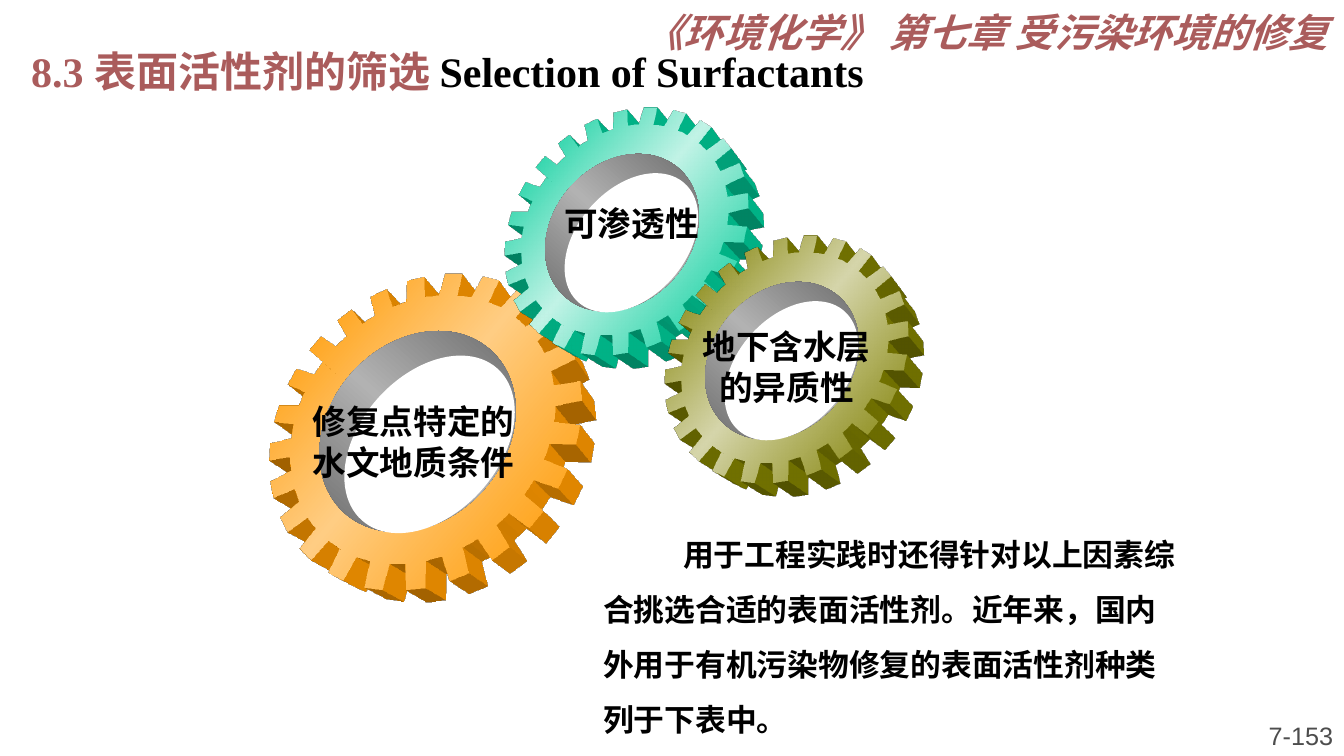
"""Build a slide with three interlocking gears naming the factors in choosing surfactants."""
from math import cos, radians, sin

from lxml.etree import SubElement
from pptx import Presentation
from pptx.dml.color import RGBColor
from pptx.enum.shapes import MSO_SHAPE
from pptx.enum.text import MSO_ANCHOR, MSO_AUTO_SIZE, PP_ALIGN
from pptx.oxml import parse_xml
from pptx.oxml.ns import nsdecls, qn
from pptx.util import Emu, Pt

SCALE = 914400 / 100.8
CJK = "Noto Sans CJK SC"
SERIF = "Times New Roman"
ROSE, BLACK, GREY = "AA5C5C", "000000", "4D4D4D"


def paint(sp, colors, angle):
    sp.shadow.inherit = False
    sp.line.fill.background()
    if len(colors) == 1:
        sp.fill.solid()
        sp.fill.fore_color.rgb = RGBColor.from_string(colors[0])
        return
    sp.fill.gradient()
    sp.fill.gradient_angle = 360 - angle
    stops = sp._element.spPr.find(".//" + qn("a:gsLst"))
    for stop in list(stops):
        stops.remove(stop)
    for i, color in enumerate(colors):
        stop = SubElement(stops, qn("a:gs"), pos=str(i * 50000))
        SubElement(stop, qn("a:srgbClr"), val=color)


def write(sp, box, runs, size, font, align, line=None, bold=True):
    sp.left, sp.top, sp.width, sp.height = [Emu(round(v * SCALE)) for v in box]
    tf = sp.text_frame
    tf.auto_size = MSO_AUTO_SIZE.NONE
    tf.word_wrap = True
    tf.vertical_anchor = MSO_ANCHOR.TOP
    p = tf.paragraphs[0]
    p.alignment = align
    p.space_before = Pt(0)
    if line:
        p.line_spacing = Emu(round(line * SCALE))
    for text, color in runs:
        r = p.add_run()
        r.text = text
        r.font.size = Pt(size)
        r.font.bold = bold
        r.font.name = font
        r.font.color.rgb = RGBColor.from_string(color)
        SubElement(r._r.get_or_add_rPr(), qn("a:ea"), typeface=CJK)
    return p


prs = Presentation()
prs.slide_width, prs.slide_height = Emu(round(1344 * SCALE)), Emu(round(756 * SCALE))
s = prs.slides.add_slide(prs.slide_layouts[1])
title, body = s.placeholders

gears = [
    (415, 423, 171, "FF9900", "FFCD83"),
    (620, 226, 134, "00CC99", "C1F3E6"),
    (780, 354, 134, "808000", "D5D5AA"),
]
tooth = [(1, -3.4), (1, 3.4), (0.85, 4.35), (0.85, 7.5), (0.85, 10.65)]
holes = [
    (-0.5, -0.59, 1.03, 1.28, ["525252", "B2B2B2", "525252"]),
    (-0.32, -0.47, 0.81, 1.19, ["FFFFFF"]),
]
for cx, cy, radius, dark, light in gears:
    points = []
    for i in range(24):
        for reach, turn in tooth:
            a = radians(15 * i + turn)
            points.append((round((cx + radius * reach * cos(a)) * SCALE),
                           round((cy - radius * reach * sin(a)) * SCALE)))
    outline = s.shapes.build_freeform(*points[0], scale=1.0)
    outline.add_line_segments(points[1:], close=True)
    gear = outline.convert_to_shape()
    paint(gear, [dark, light, dark], 45)
    gear._element.spPr.append(parse_xml(
        f'<a:scene3d {nsdecls("a")}><a:camera prst="legacyPerspectiveFront">'
        '<a:rot lat="20099999" lon="1500000" rev="0"/></a:camera>'
        '<a:lightRig rig="legacyFlat3" dir="b"/></a:scene3d>'))
    gear._element.spPr.append(parse_xml(
        f'<a:sp3d {nsdecls("a")} extrusionH="430200" prstMaterial="legacyMatte">'
        '<a:bevelT w="13500" h="13500" prst="angle"/>'
        '<a:bevelB w="13500" h="13500" prst="angle"/>'
        f'<a:extrusionClr><a:srgbClr val="{dark}"/></a:extrusionClr></a:sp3d>'))
    for dx, dy, w, h, colors in holes:
        box = (cx + dx * radius, cy + dy * radius, w * radius, h * radius)
        hole = s.shapes.add_shape(MSO_SHAPE.OVAL, *[Emu(round(v * SCALE)) for v in box])
        hole.rotation = 41.8
        paint(hole, colors, 90)

labels = [
    ((302, 395, 223, 92), "修复点特定的水文地质条件"),
    ((554, 197, 155, 50), "可渗透性"),
    ((688, 320, 197, 92), "地下含水层的异质性"),
]
for box, text in labels:
    label = s.shapes.add_textbox(0, 0, 0, 0)
    write(label, box, [(text, BLACK)], 24, CJK, PP_ALIGN.CENTER, 41)

p = write(body, (593, 513, 596, 234),
          [("用于工程实践时还得针对以上因素综合挑选合适的表面活性剂。"
            "近年来，国内外用于有机污染物修复的表面活性剂种类列于下表中。", BLACK)],
          22, CJK, PP_ALIGN.LEFT, 55)
pPr = p._p.get_or_add_pPr()
pPr.set("marL", "0")
pPr.set("indent", str(round(80 * SCALE)))
SubElement(pPr, qn("a:buNone"))

p = write(title, (21, 13, 1080, 87),
          [("8.3 表面活性剂的筛选 ", ROSE), ("Selection of Surfactants", BLACK)],
          30, SERIF, PP_ALIGN.LEFT, 78)
pPr = p._p.get_or_add_pPr()
pPr.set("marL", str(round(50 * SCALE)))
pPr.set("indent", str(round(-50 * SCALE)))

number = s.shapes.add_textbox(0, 0, 0, 0)
write(number, (1132, 704, 211, 52), [("7-153", GREY)], 18, "Arial", PP_ALIGN.RIGHT, bold=False)
number.text_frame.vertical_anchor = MSO_ANCHOR.BOTTOM

header = s.shapes.add_textbox(0, 0, 0, 0)
p = write(header, (537, 0, 801, 57), [("《环境化学》 第七章 受污染环境的修复", ROSE)],
          28, SERIF, PP_ALIGN.RIGHT, 50)
p.runs[0].font.italic = True

prs.save("out.pptx")
